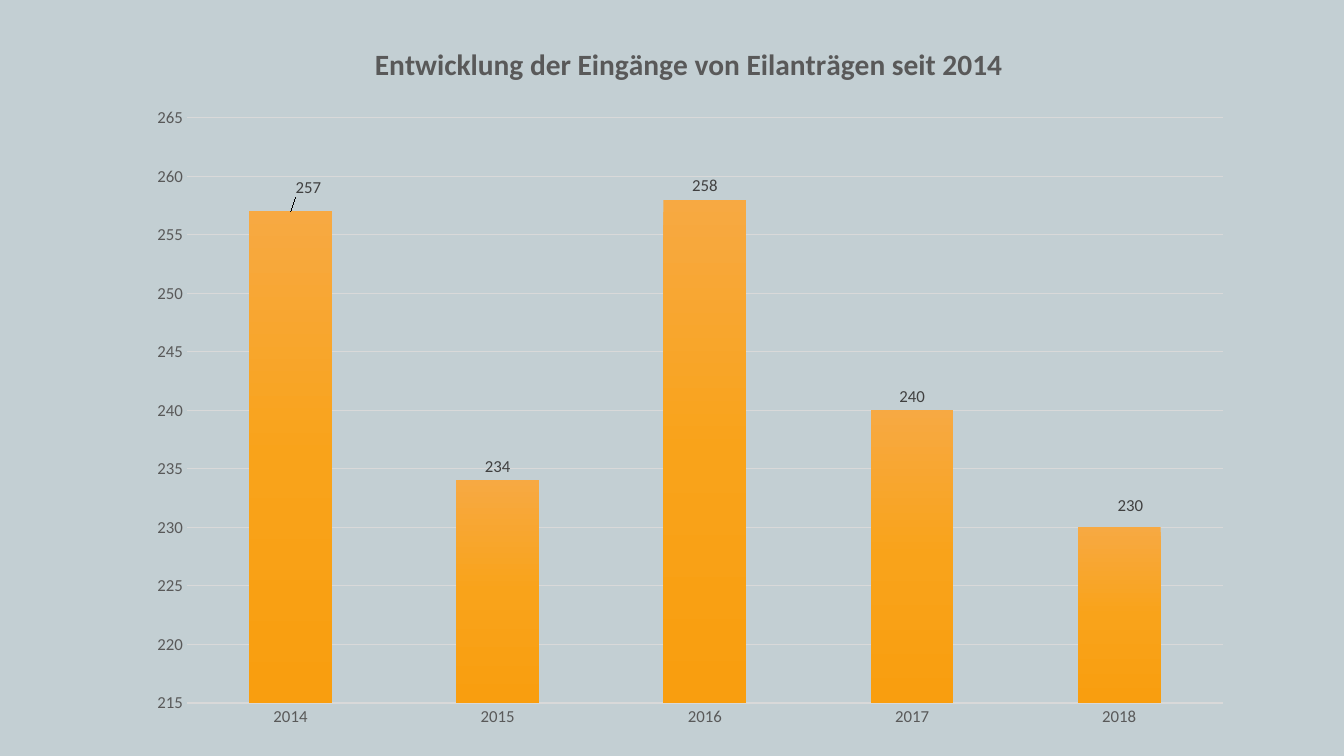
from lxml import etree
from pptx import Presentation, util as u
from pptx.chart.data import CategoryChartData
from pptx.dml.color import RGBColor
from pptx.enum import chart as ec
from pptx.oxml.ns import qn


def rgb(value):
    return RGBColor.from_string(value)


def place(after, **box):
    layout = etree.Element(qn("c:layout"))
    manual = etree.SubElement(layout, qn("c:manualLayout"))
    for key, value in box.items():
        etree.SubElement(manual, qn("c:" + key)).set("val", str(value))
    after.addnext(layout)


prs = Presentation()
prs.slide_width, prs.slide_height = u.Inches(13.33), u.Inches(7.5)
s = prs.slides.add_slide(prs.slide_layouts[6])
s.background.fill.solid()
s.background.fill.fore_color.rgb = rgb("C3CFD3")

data = CategoryChartData()
data.categories = ["2014", "2015", "2016", "2017", "2018"]
data.add_series("Series 1", (257, 234, 258, 240, 230))
W, H = prs.slide_width, prs.slide_height
frame = s.shapes.add_chart(ec.XL_CHART_TYPE.COLUMN_CLUSTERED,
                           int(W * 0.099), int(H * 0.025), int(W * 0.827), int(H * 0.955), data)
chart = frame.chart
chart.has_legend = False
chart.font.name = "Calibri"
chart.font.size = u.Pt(10)

tf = chart.chart_title.text_frame
tf.text = "Entwicklung der Eingänge von Eilanträgen seit 2014"
chart.chart_title.include_in_layout = False
cat, val = chart.category_axis, chart.value_axis
plot = chart.plots[0]
plot.gap_width = 150
plot.vary_by_categories = False
ser = plot.series[0]
labels = ser.data_labels
for name, value in {"show_value": True, "position": ec.XL_LABEL_POSITION.OUTSIDE_END}.items():
    setattr(labels, name, value)

offsets = {0: (0.016, -0.014), 4: (0.01, -0.011)}
moved = [ser.points[i].data_label for i in offsets]
for label in moved:
    label.position = ec.XL_LABEL_POSITION.OUTSIDE_END

fonts = [(tf.paragraphs[0].runs[0].font, 21, True, "595959")]
fonts += [(axis.tick_labels.font, 12, False, "595959") for axis in (cat, val)]
fonts += [(item.font, 12, False, "404040") for item in [labels] + moved]
for font, size, bold, color in fonts:
    for name, value in {"name": "Calibri", "size": u.Pt(size), "bold": bold}.items():
        setattr(font, name, value)
    font.color.rgb = rgb(color)

for axis in (cat, val):
    axis.major_tick_mark = axis.minor_tick_mark = ec.XL_TICK_MARK.NONE
for name, value in {"minimum_scale": 215, "maximum_scale": 265, "major_unit": 5}.items():
    setattr(val, name, value)
val.format.line.fill.background()
for line, width in ((cat.format.line, 1), (val.major_gridlines.format.line, 0.75)):
    line.color.rgb = rgb("D9D9D9")
    line.width = u.Pt(width)

fill = ser.format.fill
fill.gradient()
fill.gradient_angle = 270
stops = ser._element.find(".//" + qn("a:gsLst"))
for stop in list(stops):
    stops.remove(stop)
for share, color in ((0, "F7A942"), (50, "F9A31A"), (100, "F99E0F")):
    stop = etree.SubElement(stops, qn("a:gs"), pos=str(share * 1000))
    etree.SubElement(stop, qn("a:srgbClr"), val=color)

place(chart.chart_title._element.find(qn("c:tx")), xMode="edge", yMode="edge", x=0.22, y=0.04)
area = plot._element.getparent()
for old in area.findall(qn("c:layout")):
    area.remove(old)
anchor = etree.Element("anchor")
area.insert(0, anchor)
place(anchor, layoutTarget="inner", xMode="edge", yMode="edge",
      x=0.0485, y=0.137, w=0.932, h=0.8105)
area.remove(anchor)
for label in ser._element.iter(qn("c:dLbl")):
    idx = label.find(qn("c:idx"))
    dx, dy = offsets[int(idx.get("val"))]
    place(idx, x=dx, y=dy)

prs.save("out.pptx")
